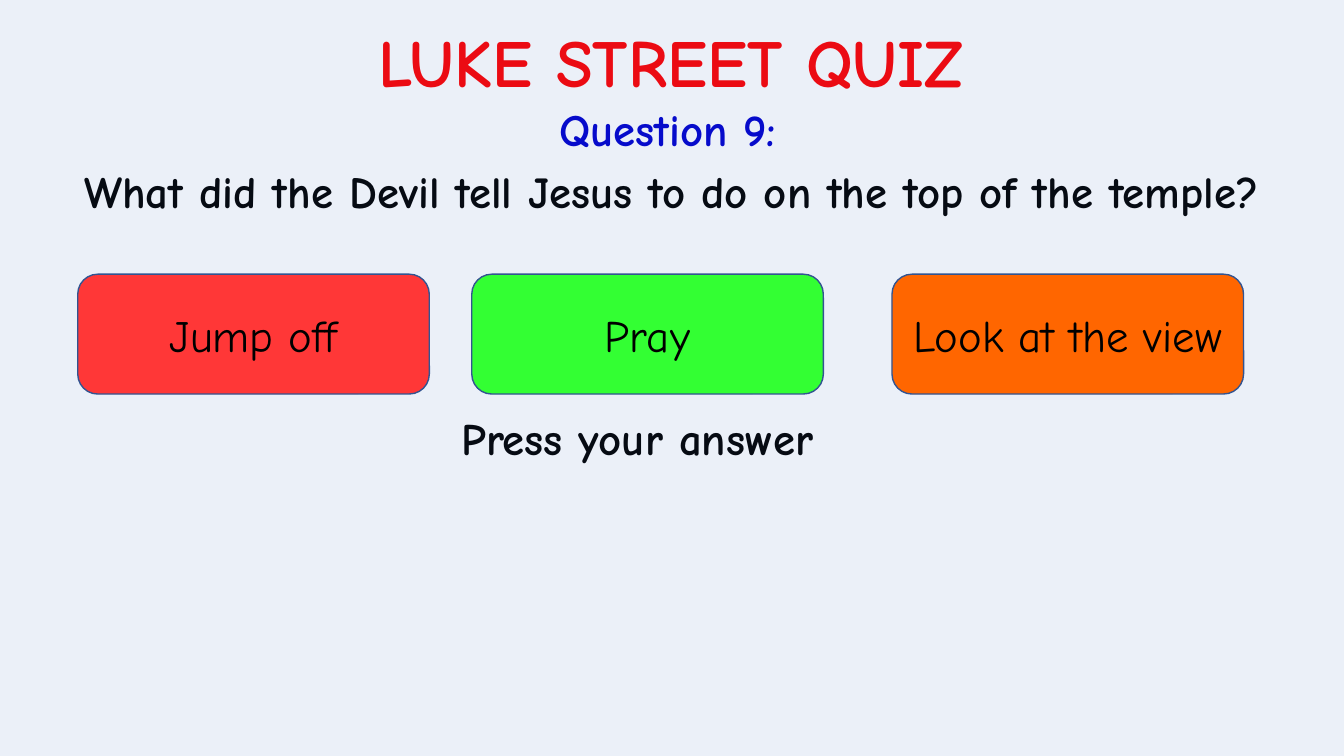
from dataclasses import dataclass

import pptx
import pptx.dml.color
import pptx.enum.shapes
import pptx.enum.text
import pptx.oxml.ns
import pptx.shapes.autoshape
import pptx.slide
import pptx.util
from lxml import etree
from pptx.util import Cm

RGBColor = pptx.dml.color.RGBColor
PP_ALIGN = pptx.enum.text.PP_ALIGN
MSO_ANCHOR = pptx.enum.text.MSO_ANCHOR
MSO_AUTO_SIZE = pptx.enum.text.MSO_AUTO_SIZE
MSO_SHAPE = pptx.enum.shapes.MSO_SHAPE

FONT = "Comic Neue"
BLACK = RGBColor(0x00, 0x00, 0x00)
TITLE_RED = RGBColor(0xFF, 0x00, 0x00)
HEADING_BLUE = RGBColor(0x00, 0x00, 0xCC)
TINT_BLUE = RGBColor(0x44, 0x72, 0xC4)
LINE_BLUE = RGBColor(0x32, 0x54, 0x91)
ANSWER_RED = RGBColor(0xFF, 0x37, 0x37)
ANSWER_GREEN = RGBColor(0x33, 0xFF, 0x33)
ANSWER_ORANGE = RGBColor(0xFF, 0x66, 0x00)

ANSWER_TOP, ANSWER_WIDTH, ANSWER_HEIGHT = Cm(6.91), Cm(8.86), Cm(3.02)


@dataclass(frozen=True)
class Caption:
    text: str
    left: float
    top: float
    width: float
    height: float
    color: RGBColor = BLACK
    align: PP_ALIGN = PP_ALIGN.CENTER
    line_spacing: float | pptx.util.Length = 1.0
    space_before: float = 0


@dataclass(frozen=True)
class Answer:
    text: str
    left: float
    fill: RGBColor


CAPTIONS = [
    Caption("What did the Devil tell Jesus to do on the top of the temple?",
            0.94, 4.06, 32, 3.02, line_spacing=pptx.util.Pt(37), space_before=10),
    Caption("Press your answer", 11.38, 10.39, 17.09, 1.83,
            align=PP_ALIGN.LEFT, line_spacing=0.9, space_before=7.5),
    Caption("Question 9:", 11.23, 2.44, 11.2, 1.63, color=HEADING_BLUE),
]
ANSWERS = [
    Answer("Jump off", 1.96, ANSWER_RED),
    Answer("Pray", 11.89, ANSWER_GREEN),
    Answer("Look at the view", 22.48, ANSWER_ORANGE),
]


def write(tf: pptx.text.text.TextFrame, text: str, color: RGBColor, size: float = 32,
          bold: bool = True, align: PP_ALIGN = PP_ALIGN.CENTER) -> pptx.text.text._Paragraph:
    """Put one formatted run in the first paragraph and return that paragraph."""
    p = tf.paragraphs[0]
    p.alignment = align
    r = p.add_run()
    r.text = text
    r.font.name = FONT
    r.font.size = pptx.util.Pt(size)
    r.font.bold = bold
    r.font.color.rgb = color
    return p


def set_title(s: pptx.slide.Slide) -> None:
    title = s.shapes.title
    title.left, title.top, title.width, title.height = Cm(7.92), Cm(0.38), Cm(17.98), Cm(2.31)
    tf = title.text_frame
    tf.word_wrap = False
    tf.auto_size = MSO_AUTO_SIZE.SHAPE_TO_FIT_TEXT
    tf.vertical_anchor = MSO_ANCHOR.TOP
    write(tf, "LUKE STREET QUIZ", TITLE_RED, size=48)


def add_caption(s: pptx.slide.Slide, caption: Caption) -> None:
    sp = s.shapes.add_textbox(Cm(caption.left), Cm(caption.top),
                              Cm(caption.width), Cm(caption.height))
    tf = sp.text_frame
    tf.word_wrap = True
    p = write(tf, caption.text, caption.color, align=caption.align)
    p.line_spacing = caption.line_spacing
    p.space_before = pptx.util.Pt(caption.space_before)


def add_box(s: pptx.slide.Slide, kind: MSO_SHAPE, left: Cm, top: Cm, width: Cm, height: Cm,
            fill: RGBColor) -> pptx.shapes.autoshape.Shape:
    sp = s.shapes.add_shape(kind, left, top, width, height)
    sp.shadow.inherit = False
    sp.fill.solid()
    sp.fill.fore_color.rgb = fill
    sp.line.color.rgb = LINE_BLUE
    sp.line.width = pptx.util.Pt(1)
    return sp


def add_tint(s: pptx.slide.Slide) -> None:
    """Lay a 10 % blue wash over the whole slide."""
    sp = add_box(s, MSO_SHAPE.RECTANGLE, Cm(-1.19), Cm(-1.55), Cm(36.04), Cm(22.17), TINT_BLUE)
    qn = pptx.oxml.ns.qn
    color = sp.fill._xPr.find(qn("a:solidFill")).find(qn("a:srgbClr"))
    etree.SubElement(color, qn("a:alpha"), val="10000")


def add_answer(s: pptx.slide.Slide, answer: Answer) -> None:
    sp = add_box(s, MSO_SHAPE.ROUNDED_RECTANGLE, Cm(answer.left), ANSWER_TOP,
                 ANSWER_WIDTH, ANSWER_HEIGHT, answer.fill)
    tf = sp.text_frame
    tf.word_wrap = True
    tf.vertical_anchor = MSO_ANCHOR.MIDDLE
    write(tf, answer.text, BLACK, bold=False)


def main() -> None:
    prs = pptx.Presentation()
    prs.slide_width, prs.slide_height = Cm(33.87), Cm(19.05)
    s = prs.slides.add_slide(prs.slide_layouts[5])
    set_title(s)
    for caption in CAPTIONS:
        add_caption(s, caption)
    add_tint(s)
    for answer in ANSWERS:
        add_answer(s, answer)
    prs.save("out.pptx")


if __name__ == "__main__":
    main()
